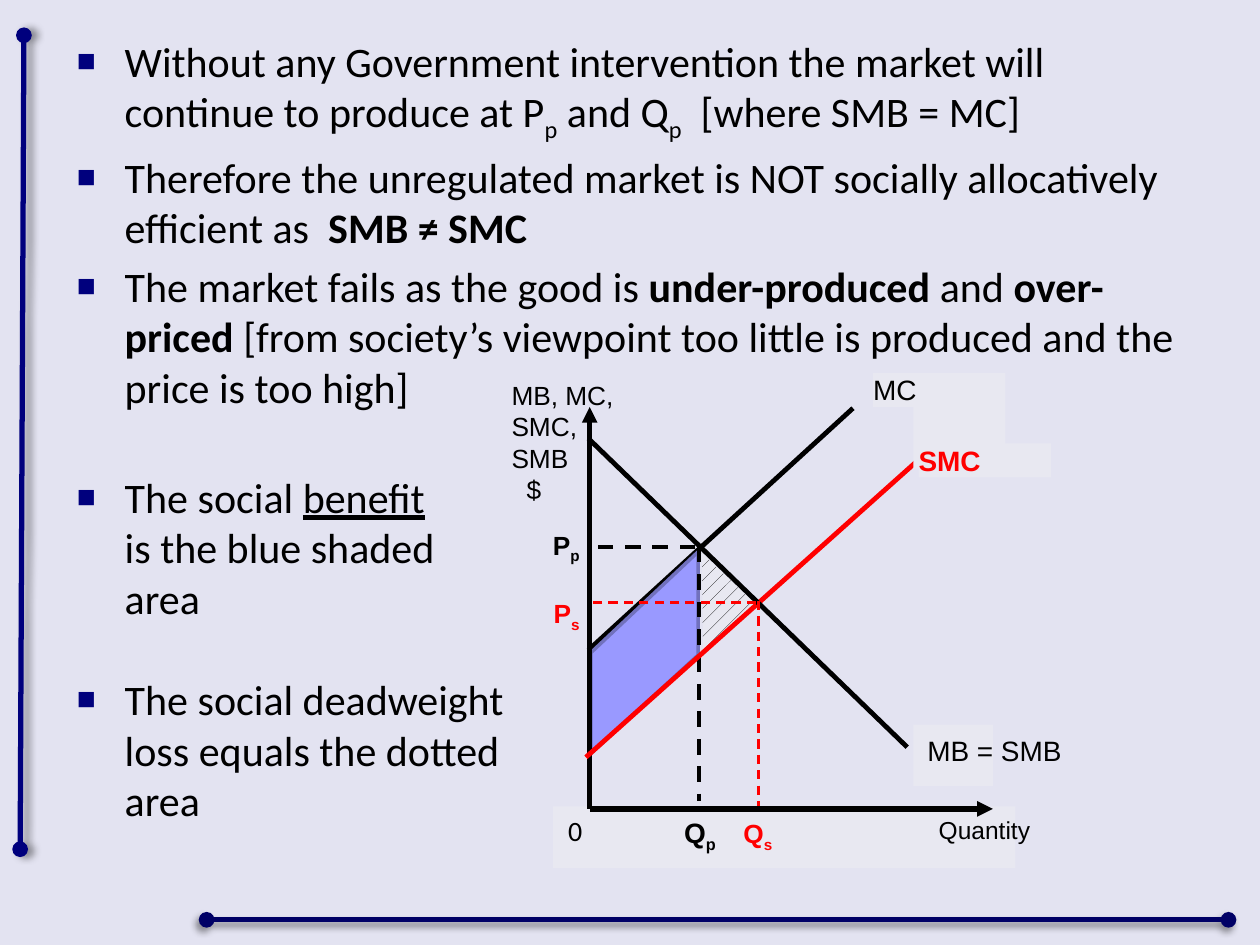
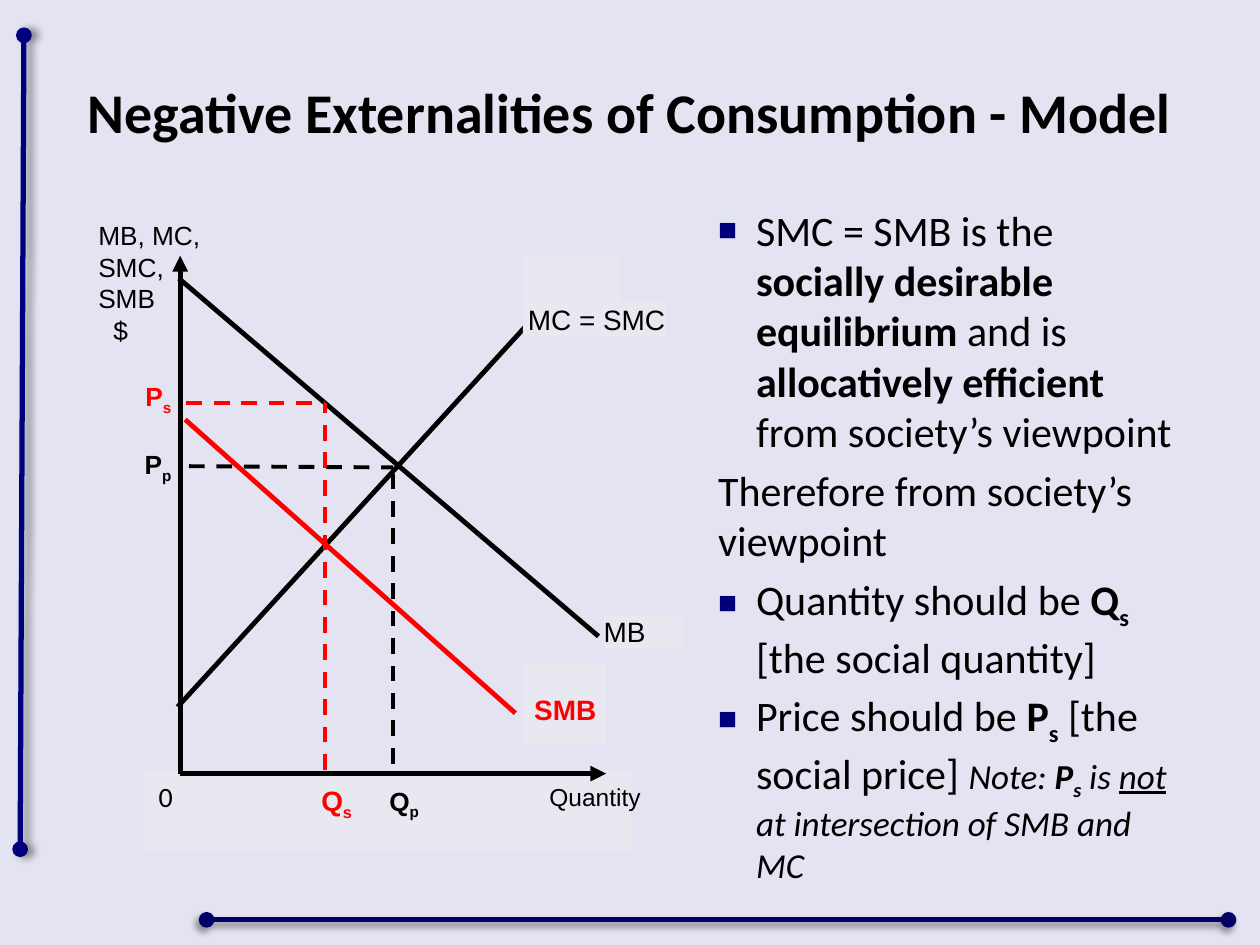
from dataclasses import dataclass, field
from functools import singledispatch

from lxml.etree import SubElement
from pptx import Presentation
from pptx.dml.color import RGBColor
from pptx.enum.dml import MSO_PATTERN
from pptx.enum.shapes import MSO_CONNECTOR, MSO_SHAPE
from pptx.enum.text import MSO_ANCHOR, MSO_AUTO_SIZE, PP_ALIGN
from pptx.oxml.ns import qn
from pptx.util import Inches, Pt

COLORS = {
    "paper": "E3E3F1",
    "panel": "E8E8F1",
    "navy": "00007D",
    "deep_navy": "000066",
    "black": "000000",
    "red": "FF0000",
    "blue": "9999FF",
    "blue_edge": "7171BD",
}
DASHES = {"long": ("400000", "300000"), "short": ("300000", "200000")}
BODY_FORMAT = {"name": "Calibri", "size": Pt(24), "color": "black"}
TITLE_FORMAT = BODY_FORMAT | {"size": Pt(32), "bold": True}
LABEL_FORMAT = {"name": "Arial", "size": Pt(16), "color": "black"}
AXIS_FORMAT = LABEL_FORMAT | {"size": Pt(15)}
BOLD = {"bold": True}
SUB = {"subscript": True}
UNDERLINE = {"underline": True}
NOTE = {"size": Pt(20), "italic": True}
BREAK = "\n"
Point = tuple[float, float]


@dataclass
class Span:
    text: str
    format: dict = field(default_factory=dict)


@dataclass
class Item:
    spans: list[Span]
    bullet: bool = True
    before: float = 4.8


@dataclass
class Stroke:
    start: Point
    end: Point
    color: str = "black"
    width: float = 2.75
    dash: str = ""
    head: str = ""
    tail: str = ""


@dataclass
class Panel:
    left: float
    top: float
    width: float
    height: float


@dataclass
class Label:
    left: float
    top: float
    width: float
    spans: list[Span]
    format: dict = field(default_factory=lambda: LABEL_FORMAT)
    filled: bool = False
    align: PP_ALIGN = PP_ALIGN.LEFT


@dataclass
class AxisNote:
    left: float
    top: float


@dataclass
class Area:
    points: list[Point]
    hatched: bool = False


def rgb(name: str) -> RGBColor:
    return RGBColor.from_string(COLORS[name])


def write_spans(para, spans: list[Span], base: dict) -> None:
    for part in spans:
        if part.text == BREAK:
            para.add_line_break()
            continue
        span = para.add_run()
        span.text = part.text
        for key, value in (base | part.format).items():
            if key == "color":
                span.font.color.rgb = rgb(value)
            elif key == "subscript":
                span._r.get_or_add_rPr().set("baseline", "-25000")
            else:
                setattr(span.font, key, value)


def write_list(body, items: list[Item], margin: float, hanging: float) -> None:
    frame = body.text_frame
    frame.auto_size = MSO_AUTO_SIZE.NONE
    frame.vertical_anchor = MSO_ANCHOR.TOP
    for index, item in enumerate(items):
        para = frame.add_paragraph() if index else frame.paragraphs[0]
        properties = para._p.get_or_add_pPr()
        indent = hanging if item.bullet else 0
        properties.set("marL", str(Inches(margin + indent)))
        properties.set("indent", str(Inches(-indent)))
        if item.bullet:
            color = SubElement(properties, qn("a:buClr"))
            SubElement(color, qn("a:srgbClr"), val=COLORS["navy"])
            SubElement(properties, qn("a:buSzPct"), val="75000")
            SubElement(properties, qn("a:buChar"), char="■")
        else:
            SubElement(properties, qn("a:buNone"))
        para.space_before = Pt(item.before if index else 0)
        write_spans(para, item.spans, BODY_FORMAT)


def place(shape, left: float, top: float, width: float, height: float) -> None:
    box = {"left": left, "top": top, "width": width, "height": height}
    for key, value in box.items():
        setattr(shape, key, Inches(value))


def add_text_box(page, left: float, top: float, width: float, height: float):
    box = page.shapes.add_textbox(*map(Inches, (left, top, width, height)))
    frame = box.text_frame
    frame.word_wrap = True
    for side in ("left", "top", "right", "bottom"):
        setattr(frame, f"margin_{side}", 0)
    return box


@singledispatch
def draw(mark, page):
    raise TypeError(mark)


@draw.register
def draw_stroke(mark: Stroke, page):
    ends = map(Inches, (*mark.start, *mark.end))
    line = page.shapes.add_connector(MSO_CONNECTOR.STRAIGHT, *ends)
    line.line.color.rgb = rgb(mark.color)
    line.line.width = Pt(mark.width)
    properties = line.element.spPr
    outline = properties.find(qn("a:ln"))
    if mark.dash:
        length, gap = DASHES[mark.dash]
        pattern = SubElement(outline, qn("a:custDash"))
        SubElement(pattern, qn("a:ds"), d=length, sp=gap)
    for tag, kind in (("a:headEnd", mark.head), ("a:tailEnd", mark.tail)):
        if kind:
            SubElement(outline, qn(tag), type=kind)
    SubElement(properties, qn("a:effectLst"))
    return line


@draw.register
def draw_panel(mark: Panel, page):
    bounds = map(Inches, (mark.left, mark.top, mark.width, mark.height))
    panel = page.shapes.add_shape(MSO_SHAPE.RECTANGLE, *bounds)
    panel.shadow.inherit = False
    panel.fill.solid()
    panel.fill.fore_color.rgb = rgb("panel")
    panel.line.fill.background()


@draw.register
def draw_label(mark: Label, page):
    box = add_text_box(page, mark.left, mark.top, mark.width, 0.27)
    if mark.filled:
        box.fill.solid()
        box.fill.fore_color.rgb = rgb("panel")
    para = box.text_frame.paragraphs[0]
    para.alignment = mark.align
    write_spans(para, mark.spans, mark.format)


@draw.register
def draw_axis_note(mark: AxisNote, page):
    frame = add_text_box(page, mark.left, mark.top, 0.95, 1.01).text_frame
    for index, text in enumerate(("MB, MC,", "SMC,", "SMB", "$")):
        para = frame.add_paragraph() if index else frame.paragraphs[0]
        if text == "$":
            para._p.get_or_add_pPr().set("marL", str(Inches(0.12)))
        write_spans(para, [Span(text)], AXIS_FORMAT)


@draw.register
def draw_area(mark: Area, page):
    corners = [(Inches(x), Inches(y)) for x, y in mark.points]
    builder = page.shapes.build_freeform(*corners[0])
    builder.add_line_segments(corners[1:], close=True)
    area = builder.convert_to_shape()
    area.shadow.inherit = False
    if mark.hatched:
        area.fill.patterned()
        area.fill.pattern = MSO_PATTERN.PERCENT_10
        area.fill.fore_color.rgb = rgb("black")
        area.fill.back_color.rgb = rgb("panel")
        area.line.fill.background()
    else:
        area.fill.solid()
        area.fill.fore_color.rgb = rgb("blue")
        area.line.color.rgb = rgb("blue_edge")
        area.line.width = Pt(2)


def symbol(letter: str, subscript: str, color: str = "black") -> list[Span]:
    style = BOLD | {"color": color}
    return [Span(letter, style), Span(subscript, style | SUB)]


def price(left: float, top: float, subscript: str, color: str = "black") -> Label:
    return Label(left, top, 0.54, symbol("P", subscript, color), AXIS_FORMAT, align=PP_ALIGN.RIGHT)


def axes(origin: Point, top: float, right: float) -> list[Stroke]:
    ends = ((right, origin[1]), (origin[0], top))
    return [Stroke(origin, end, width=3, tail="triangle") for end in ends]


def axis_words(zero: Point, quantity: Point) -> list[Label]:
    return [
        Label(*zero, 0.34, [Span("0")], LABEL_FORMAT | {"name": "Calibri"}),
        Label(*quantity, 0.85, [Span("Quantity")], LABEL_FORMAT | {"size": Pt(14)}),
    ]


def dress_master(deck, page) -> None:
    master = deck.slide_master
    master.background.fill.solid()
    master.background.fill.fore_color.rgb = rgb("paper")
    rails = [
        (Stroke((0.19, 0.28), (0.16, 6.74), "navy", 3, head="oval", tail="oval"), 0),
        (Stroke((1.64, 7.3), (9.75, 7.3), "deep_navy", 3, head="oval", tail="oval"), 135),
    ]
    for number, (stroke, angle) in enumerate(rails):
        rail = draw(stroke, page).element
        effects = rail.spPr.find(qn("a:effectLst"))
        shadow = SubElement(effects, qn("a:outerShdw"), blurRad=str(Pt(4)), dist=str(Pt(3)), dir=str(angle * 60000))
        color = SubElement(shadow, qn("a:srgbClr"), val=COLORS["black"])
        SubElement(color, qn("a:alpha"), val="40000")
        next(rail.iter(qn("p:cNvPr"))).set("id", str(101 + number))
        master.shapes.element.insert(2 + number, rail)


MARKET_FAILURE = [
    Item([Span("Without any Government intervention the market will continue to produce at P"), Span("p", SUB),
          Span(" and Q"), Span("p", SUB), Span("  [where SMB = MC]")]),
    Item([Span("Therefore the unregulated market is NOT socially allocatively efficient as  "), Span("SMB ≠ SMC", BOLD)]),
    Item([Span("The market fails as the good is "), Span("under-produced ", BOLD), Span("and "), Span("over-priced ", BOLD),
          Span("[from society’s viewpoint too little is produced and the price is too high]")]),
    Item([Span("The social "), Span("benefit", UNDERLINE), Span(BREAK), Span("is the blue shaded"), Span(BREAK),
          Span("area")], before=34),
    Item([Span("The social deadweight"), Span(BREAK), Span("loss equals the dotted"), Span(BREAK), Span("area")], before=29.3),
]
SOCIAL_OPTIMUM = [
    Item([Span("SMC = SMB is the "), Span("socially desirable equilibrium ", BOLD), Span("and is "),
          Span("allocatively efficient ", BOLD), Span("from society’s viewpoint")]),
    Item([Span("Therefore from society’s viewpoint")], bullet=False),
    Item([Span("Quantity should be "), *symbol("Q", "s"), Span(" [the social quantity]")]),
    Item([Span("Price should be "), *symbol("P", "s"), Span(" [the social price] "), Span("Note: ", NOTE),
          Span("P", NOTE | BOLD), Span("s", NOTE | BOLD | SUB), Span(" is ", NOTE), Span("not", NOTE | UNDERLINE),
          Span(" at intersection of SMB and MC", NOTE)]),
]
RED_BOLD = BOLD | {"color": "red"}
BENEFIT_DIAGRAM = [
    Stroke((4.67, 5.16), (6.77, 3.24)),
    Label(6.93, 2.96, 1.05, [Span("MC")], filled=True),
    Stroke((5.52, 4.34), (4.66, 4.34), width=2.25, dash="long"),
    Area([(4.69, 5.18), (5.54, 4.38), (5.54, 5.2), (4.69, 5.98)]),
    Stroke((5.55, 4.34), (5.55, 6.36), width=2.25, dash="long"),
    Area([(5.58, 5.16), (5.57, 4.39), (5.99, 4.79)], hatched=True),
    Panel(4.39, 6.4, 3.67, 0.49),
    *axis_words((4.51, 6.46), (7.45, 6.47)),
    Label(5.43, 6.47, 0.4, symbol("Q", "p")),
    Label(5.9, 6.49, 0.4, symbol("Q", "s", "red"), AXIS_FORMAT),
    AxisNote(4.06, 3.01),
    price(4.06, 4.2, "p"),
    price(4.06, 4.74, "s", "red"),
    *axes((4.68, 6.42), 3.23, 7.88),
    Stroke((4.65, 6.01), (7.39, 3.56), "red"),
    Stroke((4.67, 3.48), (7.2, 5.93)),
    Panel(7.25, 5.75, 0.63, 0.49),
    Label(7.36, 5.82, 1.15, [Span("MB = SMB")]),
    Panel(7.25, 3.23, 0.73, 0.49),
    Label(7.29, 3.52, 1.05, [Span("SMC", RED_BOLD)], filled=True),
    Stroke((6, 4.78), (4.66, 4.78), "red", 1.75, "short"),
    Stroke((6.02, 4.77), (6.02, 6.4), "red", 1.75, "short"),
]
CONSUMPTION_DIAGRAM = [
    Panel(1.14, 6.12, 3.87, 0.63),
    *axis_words((1.26, 6.19), (4.36, 6.21)),
    Label(2.55, 6.22, 0.4, symbol("Q", "s", "red")),
    Label(3.09, 6.23, 0.4, symbol("Q", "p"), AXIS_FORMAT),
    AxisNote(0.78, 1.74),
    price(0.82, 3.02, "s", "red"),
    price(0.82, 3.56, "p"),
    *axes((1.43, 6.14), 2.03, 4.81),
    Stroke((1.41, 5.61), (4.3, 2.45)),
    Stroke((1.47, 3.33), (4.09, 5.66), "red"),
    Panel(4.15, 5.27, 0.66, 0.63),
    Label(4.24, 5.5, 0.6, [Span("SMB", RED_BOLD)]),
    Panel(4.15, 2.03, 0.77, 0.63),
    Label(4.19, 2.4, 1.1, [Span("MC = SMC")], filled=True),
    Stroke((1.42, 2.21), (4.75, 5.05)),
    Label(4.79, 4.88, 0.64, [Span("MB")], filled=True),
    Stroke((1.5, 3.7), (3.12, 3.71), width=2.25, dash="long"),
    Stroke((3.12, 6.06), (3.12, 3.69), width=2.25, dash="long"),
    Stroke((2.58, 6.11), (2.58, 3.2), "red", 2.25, "long"),
    Stroke((1.48, 3.2), (2.58, 3.2), "red", 2.25, "long"),
]


def main() -> None:
    deck = Presentation()
    deck.slide_width, deck.slide_height = Inches(10), Inches(7.5)
    layout = deck.slide_layouts.get_by_name("Title and Content")

    page = deck.slides.add_slide(layout)
    dress_master(deck, page)
    title = page.shapes.title.element
    title.getparent().remove(title)
    body = page.placeholders[1]
    place(body, 0.51, 0.23, 9, 6.66)
    write_list(body, MARKET_FAILURE, 0, 0.38)
    for mark in BENEFIT_DIAGRAM:
        draw(mark, page)

    page = deck.slides.add_slide(layout)
    title = page.shapes.title
    place(title, 0.51, 0.29, 8.98, 1.18)
    title.text_frame.vertical_anchor = MSO_ANCHOR.MIDDLE
    para = title.text_frame.paragraphs[0]
    para.alignment = PP_ALIGN.CENTER
    write_spans(para, [Span("Negative Externalities of Consumption - Model")], TITLE_FORMAT)
    body = page.placeholders[1]
    place(body, 0.5, 1.57, 9, 5.41)
    write_list(body, SOCIAL_OPTIMUM, 5.1, 0.3)
    for mark in CONSUMPTION_DIAGRAM:
        draw(mark, page)

    deck.save("out.pptx")


if __name__ == "__main__":
    main()
